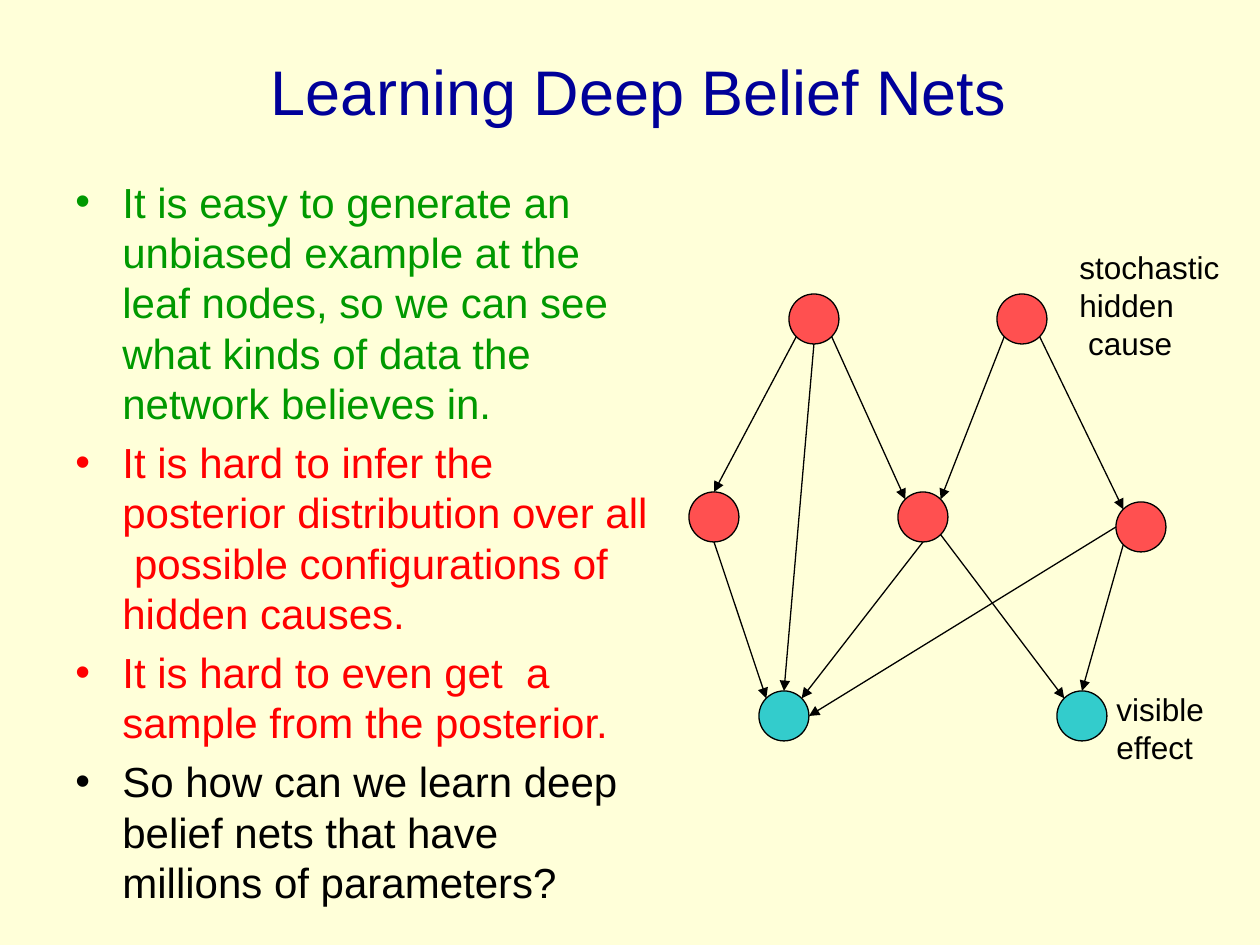
import math
from dataclasses import dataclass

import pptx
import pptx.util
from lxml import etree
from pptx.dml.color import RGBColor
from pptx.enum.shapes import MSO_CONNECTOR, MSO_SHAPE
from pptx.enum.text import MSO_ANCHOR, PP_ALIGN
from pptx.oxml.ns import qn


@dataclass(frozen=True)
class Theme:
    font: str = "Arial"
    background: str = "FFFFD9"
    title: str = "000099"
    easy: str = "009900"
    hard: str = "FF0000"
    ink: str = "000000"
    hidden: str = "FF5050"
    visible: str = "33CCCC"
    title_size: int = 36
    body_size: int = 24
    label_size: int = 18
    line_width: float = 0.75


THEME = Theme()
EMU_PER_PX = 914400 // 126
SLIDE_SIZE = (1260, 945)
NODE_SIZE = 50
BULLET_INDENT = 47

TITLE = (" Learning Deep Belief Nets", (63, 11, 1134, 158))
BULLETS_AREA = (63, 170, 597, 760)
BULLETS = [
    ("It is easy to generate an unbiased example at the leaf nodes, "
     "so we can see what kinds of data the network believes in.", THEME.easy),
    ("It is hard to infer the posterior distribution over "
     "all  possible configurations of hidden causes.", THEME.hard),
    ("It is hard to even get  a sample from the posterior.", THEME.hard),
    ("So how can we learn deep belief nets that have "
     "millions of parameters?", THEME.ink),
]
LABELS = [
    (["stochastic", "hidden", " cause"], (1067, 242, 174, 126), True),
    (["visible", "effect"], (1104, 684, 122, 88), False),
]

# name: (left, top, colour)
NODES = {
    "top left": (789, 294, THEME.hidden),
    "top right": (997, 294, THEME.hidden),
    "middle left": (689, 492, THEME.hidden),
    "middle": (898, 492, THEME.hidden),
    "middle right": (1116, 502, THEME.hidden),
    "leaf left": (759, 691, THEME.visible),
    "leaf right": (1057, 691, THEME.visible),
}

# Angles on the node's rim, clockwise from its right side
RIM = {"E": 0, "SE": 45, "S": 90, "SW": 135, "W": 180, "NW": 225, "N": 270, "NE": 315}
# (cause, rim point, effect, rim point)
ARROWS = [
    ("top left", "SW", "middle left", "N"),
    ("top left", "S", "leaf left", "N"),
    ("top left", "SE", "middle", "NW"),
    ("top right", "SW", "middle", "NE"),
    ("top right", "SE", "middle right", "NW"),
    ("middle left", "S", "leaf left", "NW"),
    ("middle", "S", "leaf left", "NE"),
    ("middle", "SE", "leaf right", "NW"),
    ("middle right", "W", "leaf left", "E"),
    ("middle right", "SW", "leaf right", "N"),
]


def emu(*lengths):
    return [pptx.util.Emu(round(length * EMU_PER_PX)) for length in lengths]


def rgb(colour):
    return RGBColor.from_string(colour)


def add_text_box(page, area, wrap=True):
    frame = page.shapes.add_textbox(*emu(*area)).text_frame
    frame.word_wrap = wrap
    return frame


def add_span(para, text, size, colour):
    span = para.add_run()
    span.text = text
    span.font.name = THEME.font
    span.font.size = pptx.util.Pt(size)
    span.font.color.rgb = rgb(colour)


def paragraphs(frame, items):
    """Pair each item with its own paragraph, starting with the existing one."""
    for index, item in enumerate(items):
        yield (frame.add_paragraph() if index else frame.paragraphs[0]), item


def add_bullet(para):
    indent = emu(BULLET_INDENT)[0]
    properties = para._p.get_or_add_pPr()
    properties.set("marL", str(indent))
    properties.set("indent", str(-indent))
    etree.SubElement(properties, qn("a:buFont"), typeface=THEME.font)
    etree.SubElement(properties, qn("a:buChar"), char="•")


def add_title(page):
    text, area = TITLE
    frame = add_text_box(page, area)
    frame.vertical_anchor = MSO_ANCHOR.MIDDLE
    para = frame.paragraphs[0]
    para.alignment = PP_ALIGN.CENTER
    add_span(para, text, THEME.title_size, THEME.title)


def add_bullets(page):
    frame = add_text_box(page, BULLETS_AREA)
    for para, (text, colour) in paragraphs(frame, BULLETS):
        para.space_before = pptx.util.Pt(0.2 * THEME.body_size)
        add_bullet(para)
        add_span(para, text, THEME.body_size, colour)


def add_label(page, lines, area, wrap):
    for para, line in paragraphs(add_text_box(page, area, wrap), lines):
        add_span(para, line, THEME.label_size, THEME.ink)


def style_line(line):
    line.color.rgb = rgb(THEME.ink)
    line.width = pptx.util.Pt(THEME.line_width)


def add_node(page, left, top, colour):
    node = page.shapes.add_shape(MSO_SHAPE.OVAL, *emu(left, top, NODE_SIZE, NODE_SIZE))
    node.shadow.inherit = False
    node.fill.solid()
    node.fill.fore_color.rgb = rgb(colour)
    style_line(node.line)


def rim_point(name, side):
    left, top, _ = NODES[name]
    radius = NODE_SIZE / 2
    angle = math.radians(RIM[side])
    return (left + radius * (1 + math.cos(angle)), top + radius * (1 + math.sin(angle)))


def add_arrow(page, cause, start, effect, end):
    ends = emu(*rim_point(cause, start), *rim_point(effect, end))
    arrow = page.shapes.add_connector(MSO_CONNECTOR.STRAIGHT, *ends)
    style_line(arrow.line)
    etree.SubElement(arrow.line._get_or_add_ln(), qn("a:tailEnd"), type="triangle")
    etree.SubElement(arrow._element.spPr, qn("a:effectLst"))


def main():
    deck = pptx.Presentation()
    deck.slide_width, deck.slide_height = emu(*SLIDE_SIZE)
    page = deck.slides.add_slide(deck.slide_layouts[6])
    page.background.fill.solid()
    page.background.fill.fore_color.rgb = rgb(THEME.background)

    add_title(page)
    add_bullets(page)
    for node in NODES.values():
        add_node(page, *node)
    for arrow in ARROWS:
        add_arrow(page, *arrow)
    for label in LABELS:
        add_label(page, *label)
    deck.save("out.pptx")


if __name__ == "__main__":
    main()
